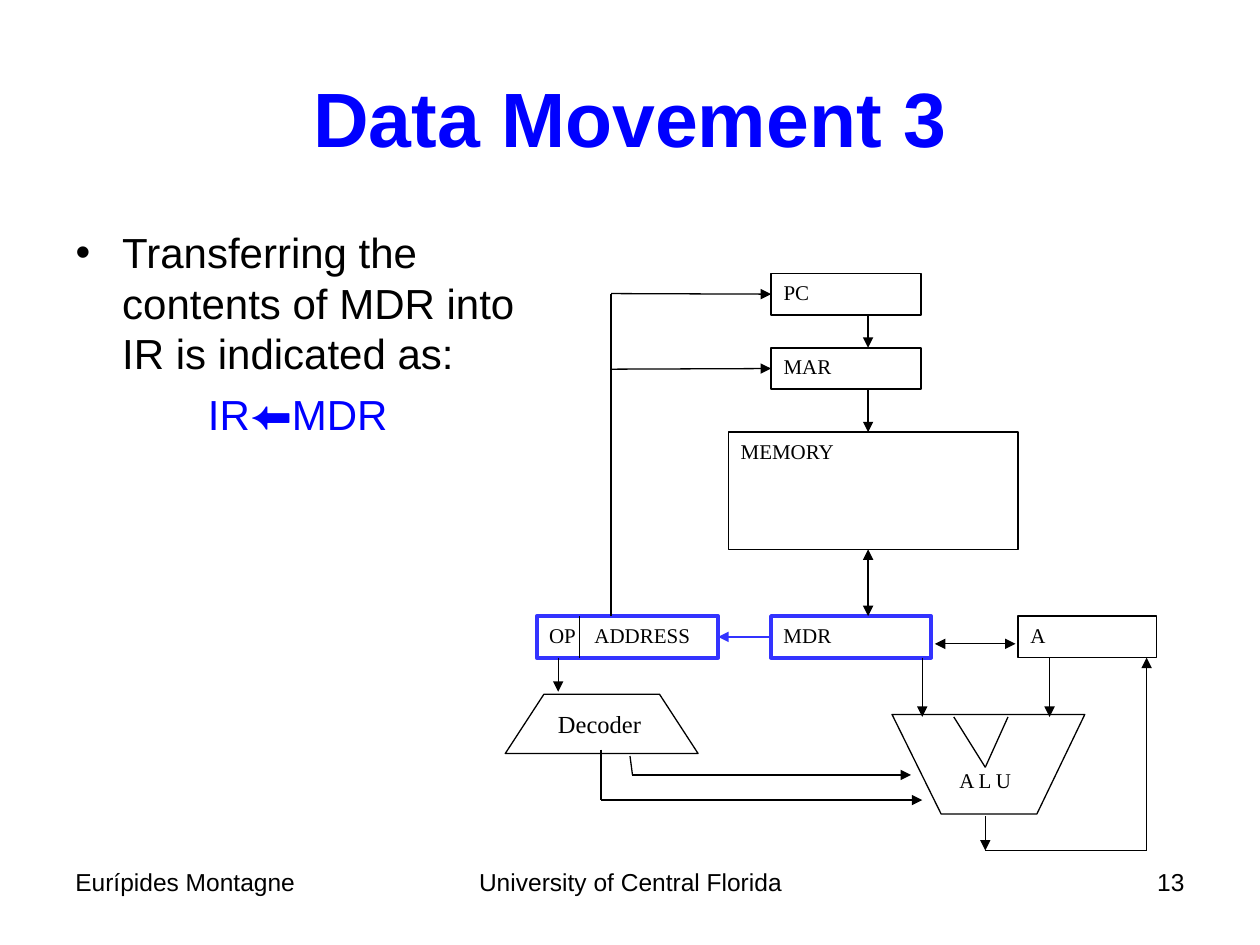
from dataclasses import dataclass
from typing import Any

from lxml.etree import SubElement
from pptx import Presentation
from pptx.dml.color import RGBColor
from pptx.enum.shapes import MSO_CONNECTOR, MSO_SHAPE
from pptx.enum.text import MSO_ANCHOR, MSO_AUTO_SIZE, PP_ALIGN
from pptx.oxml.ns import qn
from pptx.util import Pt

SCALE = 9144
COLORS = {"black": "000000", "white": "FFFFFF", "title": "0000FF", "mark": "3333FF"}
SANS, SERIF = "Arial", "Times New Roman"
FRAME = {"word_wrap": True, "auto_size": MSO_AUTO_SIZE.NONE, "vertical_anchor": MSO_ANCHOR.TOP}


@dataclass
class Box:
    text: str
    left: int
    top: int
    width: int
    height: int
    color: str = "black"
    weight: float = 0.75


@dataclass
class Wire:
    start: tuple[int, int]
    end: tuple[int, int]
    head: bool = False
    tail: bool = True
    color: str = "black"
    weight: float = 0.75
    source: tuple[str, int] | None = None
    target: tuple[str, int] | None = None


@dataclass
class Label:
    text: str
    left: int
    top: int
    width: int
    height: int
    align: PP_ALIGN
    font: str = SANS


BOXES = [
    Box("A", 808, 489, 110, 33),
    Box("PC", 612, 217, 119, 33, weight=1),
    Box("MAR", 612, 276, 119, 33, weight=1),
    Box("MDR", 612, 489, 127, 33, "mark", 2.25),
    Box("OP\tADDRESS", 426, 489, 144, 33, "mark", 2.25),
    Box("MEMORY", 578, 343, 230, 93),
]

WIRES = [
    Wire((782, 675), (910, 675), tail=False),
    Wire((910, 675), (910, 522)),
    Wire((689, 436), (689, 489), head=True),
    Wire((689, 309), (689, 343)),
    Wire((689, 250), (689, 276), weight=1),
    Wire((485, 489), (485, 233), tail=False),
    Wire((485, 233), (612, 233), target=("PC", 1)),
    Wire((485, 293), (612, 293), target=("MAR", 1)),
    Wire((612, 506), (570, 506), color="mark", weight=1.5,
         source=("MDR", 1), target=("OP\tADDRESS", 3)),
    Wire((782, 648), (782, 675)),
    Wire((757, 569), (782, 609), tail=False),
    Wire((800, 569), (782, 609), tail=False),
    Wire((732, 522), (732, 569)),
    Wire((833, 522), (833, 569)),
    Wire((460, 489), (460, 522), tail=False),
    Wire((443, 522), (443, 549)),
    Wire((500, 600), (502, 615), tail=False),
    Wire((502, 615), (723, 615)),
    Wire((477, 595), (477, 635), tail=False),
    Wire((477, 635), (732, 635)),
    Wire((742, 511), (806, 511), head=True),
]

LABELS = [
    Label("Eurípides Montagne", 50, 683, 233, 52, PP_ALIGN.LEFT),
    Label("University of Central Florida", 342, 683, 317, 52, PP_ALIGN.CENTER),
    Label("13", 717, 683, 233, 52, PP_ALIGN.RIGHT),
    Label("Decoder", 433, 558, 92, 34, PP_ALIGN.LEFT, SERIF),
]


def px(*sizes: int) -> list[int]:
    return [size * SCALE for size in sizes]


def tint(name: str) -> RGBColor:
    return RGBColor.from_string(COLORS[name])


def apply(item: Any, values: dict[str, Any]) -> None:
    for name, value in values.items():
        setattr(item, name, value)


def place(shape: Any, left: int, top: int, width: int, height: int) -> None:
    apply(shape, dict(zip(("left", "top", "width", "height"), px(left, top, width, height))))


def write(para: Any, text: str, font: str, size: int, color: str = "black",
          align: PP_ALIGN = PP_ALIGN.LEFT, bold: bool = False) -> None:
    para.alignment = align
    run = para.add_run()
    run.text = text
    apply(run.font, {"name": font, "size": Pt(size), "bold": bold})
    run.font.color.rgb = tint(color)


def paint(shape: Any, color: str = "black", weight: float = 0.75) -> None:
    shape.shadow.inherit = False
    shape.fill.solid()
    shape.fill.fore_color.rgb = tint("white")
    shape.line.color.rgb = tint(color)
    shape.line.width = Pt(weight)


def draw_box(slide: Any, box: Box) -> Any:
    shape = slide.shapes.add_shape(
        MSO_SHAPE.RECTANGLE, *px(box.left, box.top, box.width, box.height))
    paint(shape, box.color, box.weight)
    apply(shape.text_frame, FRAME)
    para = shape.text_frame.paragraphs[0]
    write(para, box.text, SERIF, 12)
    if "\t" in box.text:
        tabs = SubElement(para._p.get_or_add_pPr(), qn("a:tabLst"))
        SubElement(tabs, qn("a:tab"), pos=str(36 * SCALE), algn="l")
    return shape


def draw_wire(slide: Any, wire: Wire, nodes: dict[str, Any]) -> None:
    line = slide.shapes.add_connector(MSO_CONNECTOR.STRAIGHT, *px(*wire.start, *wire.end))
    if wire.source:
        line.begin_connect(nodes[wire.source[0]], wire.source[1])
    if wire.target:
        line.end_connect(nodes[wire.target[0]], wire.target[1])
    line.line.color.rgb = tint(wire.color)
    line.line.width = Pt(wire.weight)
    stroke = line.line._get_or_add_ln()
    for tag, shown in (("a:headEnd", wire.head), ("a:tailEnd", wire.tail)):
        if shown:
            SubElement(stroke, qn(tag), type="triangle")
    SubElement(line._element.spPr, qn("a:effectLst"))


def draw_label(slide: Any, label: Label) -> None:
    shape = slide.shapes.add_textbox(*px(label.left, label.top, label.width, label.height))
    apply(shape.text_frame, FRAME)
    write(shape.text_frame.paragraphs[0], label.text, label.font, 14, align=label.align)


def draw_units(slide: Any) -> None:
    pen = slide.shapes.build_freeform(708, 567, SCALE)
    pen.add_line_segments([(747, 646), (823, 646), (861, 567)])
    alu = pen.convert_to_shape()
    paint(alu)
    apply(alu.text_frame, FRAME | {"vertical_anchor": MSO_ANCHOR.BOTTOM,
                                   "margin_bottom": 17 * SCALE, "margin_right": 15 * SCALE})
    write(alu.text_frame.paragraphs[0], "A L U", SERIF, 12, align=PP_ALIGN.CENTER)
    gate = slide.shapes.add_shape(
        MSO_SHAPE.FLOWCHART_MANUAL_OPERATION, *px(401, 551, 153, 47))
    gate.rotation = 180
    paint(gate)


def fill_text(slide: Any) -> None:
    title, body = slide.shapes.title, slide.placeholders[1]
    place(title, 50, 30, 900, 125)
    apply(title.text_frame, FRAME | {"vertical_anchor": MSO_ANCHOR.MIDDLE})
    write(title.text_frame.paragraphs[0], "Data Movement 3", SANS, 44, "title",
          PP_ALIGN.CENTER, True)
    place(body, 50, 175, 382, 495)
    frame = body.text_frame
    apply(frame, FRAME)
    first, second = frame.paragraphs[0], frame.add_paragraph()
    write(first, "Transferring the contents of MDR into IR is indicated as:", SANS, 24)
    write(second, "IR⬅MDR", SANS, 24, "title")
    for para, left, indent in ((first, 37, -37), (second, 105, 0)):
        para.space_before = Pt(6)
        apply_indent = para._p.get_or_add_pPr()
        apply_indent.set("marL", str(left * SCALE))
        apply_indent.set("indent", str(indent * SCALE))
    SubElement(first._p.pPr, qn("a:buChar"), char="•")
    SubElement(second._p.pPr, qn("a:buNone"))


def main() -> None:
    deck = Presentation()
    deck.slide_width, deck.slide_height = px(1000, 750)
    slide = deck.slides.add_slide(deck.slide_layouts[1])
    fill_text(slide)
    nodes = {box.text: draw_box(slide, box) for box in BOXES}
    draw_units(slide)
    for wire in WIRES:
        draw_wire(slide, wire, nodes)
    for label in LABELS:
        draw_label(slide, label)
    deck.save("out.pptx")


if __name__ == "__main__":
    main()
